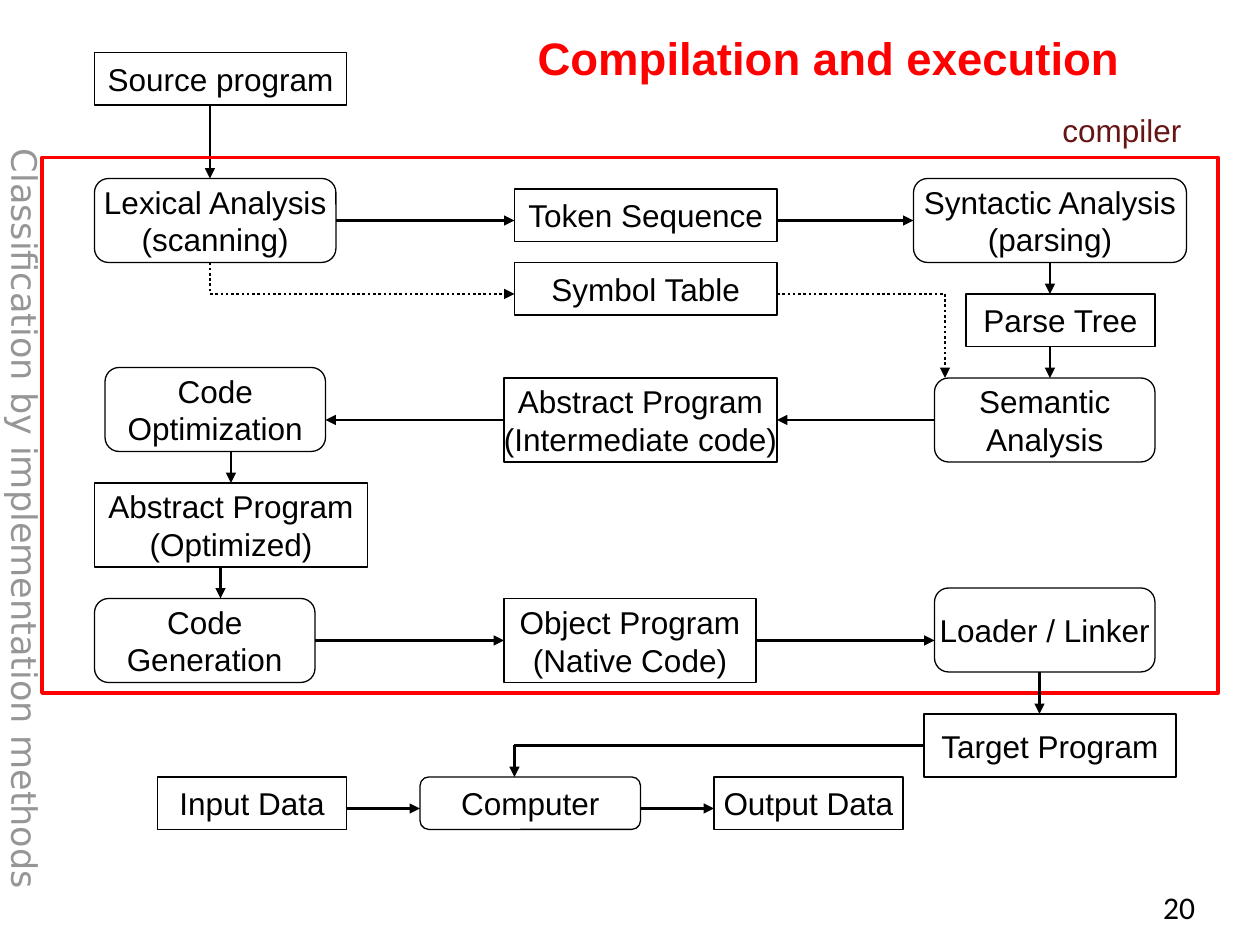
from itertools import pairwise

from lxml.etree import SubElement
from pptx import Presentation
from pptx.dml.color import RGBColor
from pptx.enum.dml import MSO_LINE
from pptx.enum.shapes import MSO_CONNECTOR, MSO_SHAPE
from pptx.enum.text import MSO_ANCHOR, PP_ALIGN
from pptx.oxml.ns import qn
from pptx.util import Cm, Pt

COLORS = {"ink": "000000", "accent": "FF0000", "label": "661414", "sidebar": "969696"}
DATA, STEP = MSO_SHAPE.RECTANGLE, MSO_SHAPE.ROUNDED_RECTANGLE


def grid(steps):
    return Cm(steps * 2.54 / 12)


def color(name):
    return RGBColor.from_string(COLORS[name])


def write(frame, text, size, font="Arial", ink="ink", align=PP_ALIGN.LEFT, wrap=True):
    frame.word_wrap = wrap
    paragraph = frame.paragraphs[0]
    paragraph.text = text
    paragraph.alignment = align
    paragraph.font.size = Pt(size)
    paragraph.font.name = font
    paragraph.font.color.rgb = color(ink)
    return paragraph


def add_outline(slide, kind, box, ink, weight):
    outline = slide.shapes.add_shape(kind, *map(grid, box))
    outline.shadow.inherit = False
    outline.fill.background()
    outline.line.color.rgb = color(ink)
    outline.line.width = Pt(weight)
    return outline


def add_nodes(slide, origin, nodes):
    left, top = origin
    for label, kind, x, y, width, height in nodes:
        node = add_outline(slide, kind, (left + x, top + y, width, height), "ink", 0.75)
        node.text_frame.vertical_anchor = MSO_ANCHOR.MIDDLE
        write(node.text_frame, label, 18, align=PP_ALIGN.CENTER, wrap=False)


def add_routes(slide, origin, routes, dotted=False):
    left, top = origin
    for route in routes:
        points = [(grid(left + x), grid(top + y)) for x, y in route]
        for start, end in pairwise(points):
            segment = slide.shapes.add_connector(MSO_CONNECTOR.STRAIGHT, *start, *end)
            segment.line.color.rgb = color("ink")
            segment.line.width = Pt(1.5)
            if dotted:
                segment.line.dash_style = MSO_LINE.ROUND_DOT
            if end == points[-1]:
                SubElement(segment.line._get_or_add_ln(), qn("a:tailEnd"), type="triangle")
            SubElement(segment._element.spPr, qn("a:effectLst"))


def add_text(slide, box, text, size, **style):
    text_box = slide.shapes.add_textbox(*map(grid, box))
    write(text_box.text_frame, text, size, **style)
    return text_box


def place_title(slide, box):
    title = slide.shapes.title
    title.left, title.top, title.width, title.height = map(grid, box)
    title.text_frame.vertical_anchor = MSO_ANCHOR.MIDDLE
    heading = write(title.text_frame, "Compilation and execution", 26, ink="accent")
    heading.font.bold = True
    heading.space_before = Pt(9)


def add_source(slide, origin):
    add_nodes(slide, origin, [("Source program", DATA, 0, 0, 24, 5)])
    add_routes(slide, origin, [[(11, 5), (11, 12)]])


def add_compiler(slide, box):
    left, top, width, height = box
    origin = left, top
    add_nodes(slide, origin, [
        ("Lexical Analysis\n(scanning)", STEP, 5, 2, 23, 8),
        ("Token Sequence", DATA, 45, 3, 25, 5),
        ("Syntactic Analysis\n(parsing)", STEP, 83, 2, 26, 8),
        ("Symbol Table", DATA, 45, 10, 25, 5),
        ("Parse Tree", DATA, 88, 13, 18, 5),
        ("Semantic\nAnalysis", STEP, 85, 21, 21, 8),
        ("Abstract Program\n(Intermediate code)", DATA, 44, 21, 26, 8),
        ("Code\nOptimization", STEP, 6, 20, 21, 8),
        ("Abstract Program\n(Optimized)", DATA, 5, 31, 26, 8),
        ("Code\nGeneration", STEP, 5, 42, 21, 8),
        ("Object Program\n(Native Code)", DATA, 44, 42, 24, 8),
        ("Loader / Linker", STEP, 85, 41, 21, 8),
    ])
    add_routes(slide, origin, [
        [(28, 6), (45, 6)],
        [(70, 6), (83, 6)],
        [(96, 10), (96, 13)],
        [(96, 18), (96, 21)],
        [(85, 25), (70, 25)],
        [(44, 25), (27, 25)],
        [(18, 28), (18, 31)],
        [(17, 39), (17, 42)],
        [(26, 46), (44, 46)],
        [(68, 46), (85, 46)],
    ])
    add_routes(slide, origin, [
        [(16, 10), (16, 13), (45, 13)],
        [(70, 13), (86, 13), (86, 21)],
    ], dotted=True)
    add_outline(slide, DATA, (left, top, width, height), "accent", 2.25)
    add_text(slide, (left + 96, top - 5, 13.8, 4.8), "compiler", 18, ink="label", wrap=False)


def add_execution(slide, origin):
    add_nodes(slide, origin, [
        ("Target Program", DATA, 73, 4, 24, 6),
        ("Input Data", DATA, 0, 10, 18, 5),
        ("Computer", STEP, 25, 10, 21, 5),
        ("Output Data", DATA, 53, 10, 18, 5),
    ])
    add_routes(slide, origin, [
        [(84, 0), (84, 4)],
        [(73, 7), (34, 7), (34, 10)],
        [(18, 13), (25, 13)],
        [(46, 13), (53, 13)],
    ])


def add_sidebar(slide, box):
    sidebar = add_text(slide, box, "Classification by implementation methods", 20,
                       font="DejaVu Sans", ink="sidebar")
    sidebar.rotation = 90


def main():
    presentation = Presentation()
    presentation.slide_width, presentation.slide_height = Cm(25.4), Cm(19.05)
    slide = presentation.slides.add_slide(presentation.slide_layouts[5])
    place_title(slide, (50, 2, 64, 7))
    add_source(slide, (9, 5))
    add_compiler(slide, (4, 15, 112, 51))
    add_execution(slide, (15, 64))
    add_sidebar(slide, (-36.1, 48.9, 77, 5.2))
    add_text(slide, (107, 84, 8, 6), "20", 18, font="Calibri", align=PP_ALIGN.RIGHT)
    presentation.save("out.pptx")


if __name__ == "__main__":
    main()
